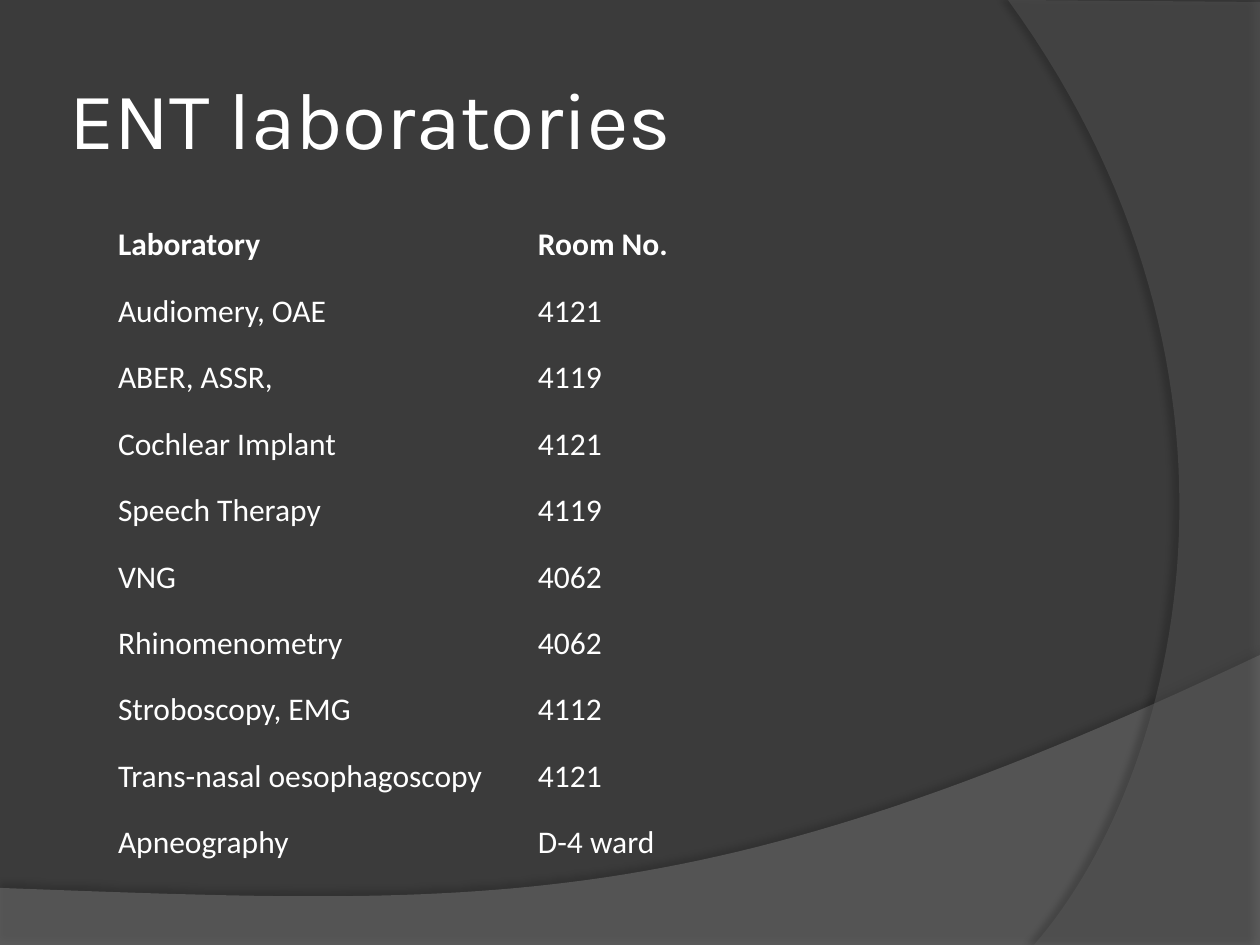
import pptx
import pptx.util
import pptx.dml.color
import pptx.enum.text
import pptx.oxml
import pptx.oxml.ns

PX = 914400 / 126
SLIDE = (0, 0, 1260, 945)
NO_GRID_STYLE = "{2D5ABB26-0587-4C30-8999-92F81FD0307C}"
LABORATORIES = [
    ("Laboratory", "Room No."),
    ("Audiomery, OAE", "4121"),
    ("ABER, ASSR,", "4119"),
    ("Cochlear Implant", "4121"),
    ("Speech Therapy", "4119"),
    ("VNG", "4062"),
    ("Rhinomenometry", "4062"),
    ("Stroboscopy, EMG", "4112"),
    ("Trans-nasal oesophagoscopy", "4121"),
    ("Apneography", "D-4 ward"),
]


def px(length):
    return pptx.util.Emu(round(length * PX))


def color(hex_string):
    return pptx.dml.color.RGBColor.from_string(hex_string)


def paint(fill, hex_string):
    fill.solid()
    fill.fore_color.rgb = color(hex_string)


def write(frame, text, font="Calibri", size=18, bold=False, spacing=1.0, inset=13):
    frame.word_wrap = True
    paragraph = frame.paragraphs[0]
    paragraph.line_spacing = spacing
    run = paragraph.add_run()
    run.text = text
    run.font.name = font
    run.font.size = pptx.util.Pt(size)
    run.font.bold = bold
    run.font.color.rgb = color("FFFFFF")
    return inset


def bezier(start, control_1, control_2, end, steps=60):
    points = []
    for step in range(steps + 1):
        t = step / steps
        weights = ((1 - t) ** 3, 3 * t * (1 - t) ** 2, 3 * t * t * (1 - t), t ** 3)
        corners = (start, control_1, control_2, end)
        points.append(tuple(sum(w * c[axis] for w, c in zip(weights, corners)) for axis in (0, 1)))
    return points


def add_wave(slide, box, outline, fill, alpha, shadow_alpha, distance, direction):
    left, top = box[:2]
    points = [(px(left + x), px(top + y)) for x, y in outline]
    builder = slide.shapes.build_freeform(*points[0])
    builder.add_line_segments(points[1:], close=True)
    wave = builder.convert_to_shape()
    paint(wave.fill, fill)
    wave.line.fill.background()
    wave.shadow.inherit = False
    properties = wave.element.spPr
    namespace = pptx.oxml.ns.nsdecls("a")
    properties.find(".//" + pptx.oxml.ns.qn("a:srgbClr")).append(
        pptx.oxml.parse_xml(f'<a:alpha {namespace} val="{alpha * 1000}"/>'))
    properties.find(pptx.oxml.ns.qn("a:effectLst")).append(pptx.oxml.parse_xml(
        f'<a:outerShdw {namespace} blurRad="50800" dist="{pptx.util.Pt(distance)}" '
        f'dir="{direction * 60000}" algn="ctr" rotWithShape="0"><a:srgbClr val="000000">'
        f'<a:alpha val="{shadow_alpha * 1000}"/></a:srgbClr></a:outerShdw>'))


def add_background(slide, box):
    left, top, width, height = box
    paint(slide.background.fill, "3B3B3B")
    hill_top = 655
    hill = [(0, 291), (width, 291)] + bezier((width, 0), (704, 264), (493, 251), (0, 233))
    add_wave(slide, (left, top + hill_top), hill, "7F7F7F", 45, 35, 3.5, 270)
    side_left = 1008
    side = [(252, 2), (252, height)] + bezier((26, height), (170, 780), (275, 378), (0, 0))
    add_wave(slide, (left + side_left, top), side, "5E5E5E", 40, 45, 4, 180)


def add_title(slide, box):
    title = slide.shapes.add_textbox(*map(px, box)).text_frame
    title.vertical_anchor = pptx.enum.text.MSO_ANCHOR.MIDDLE
    title.margin_left = title.margin_right = px(6)
    title.margin_top = title.margin_bottom = px(6)
    write(title, "ENT laboratories", font="Karla", size=46)


def add_room_table(slide, box):
    frame = slide.shapes.add_table(len(LABORATORIES), 2, *map(px, box))
    rooms = frame.table
    rooms.first_row = rooms.horz_banding = False
    frame.element.find(".//" + pptx.oxml.ns.qn("a:tableStyleId")).text = NO_GRID_STYLE
    name_width = 420
    rooms.columns[0].width = px(name_width)
    rooms.columns[1].width = px(box[2] - name_width)
    for row, entry in enumerate(LABORATORIES):
        for column, text in enumerate(entry):
            cell = rooms.cell(row, column)
            cell.fill.background()
            cell.margin_left = cell.margin_right = px(13)
            cell.margin_top = cell.margin_bottom = px(13)
            write(cell.text_frame, text, bold=row == 0, spacing=1.07)


def main():
    deck = pptx.Presentation()
    deck.slide_width, deck.slide_height = px(SLIDE[2]), px(SLIDE[3])
    slide = deck.slides.add_slide(deck.slide_layouts[6])
    add_background(slide, SLIDE)
    add_title(slide, (63, 38, 1029, 158))
    add_room_table(slide, (105, 210, 1029, 649))
    deck.save("out.pptx")


if __name__ == "__main__":
    main()
